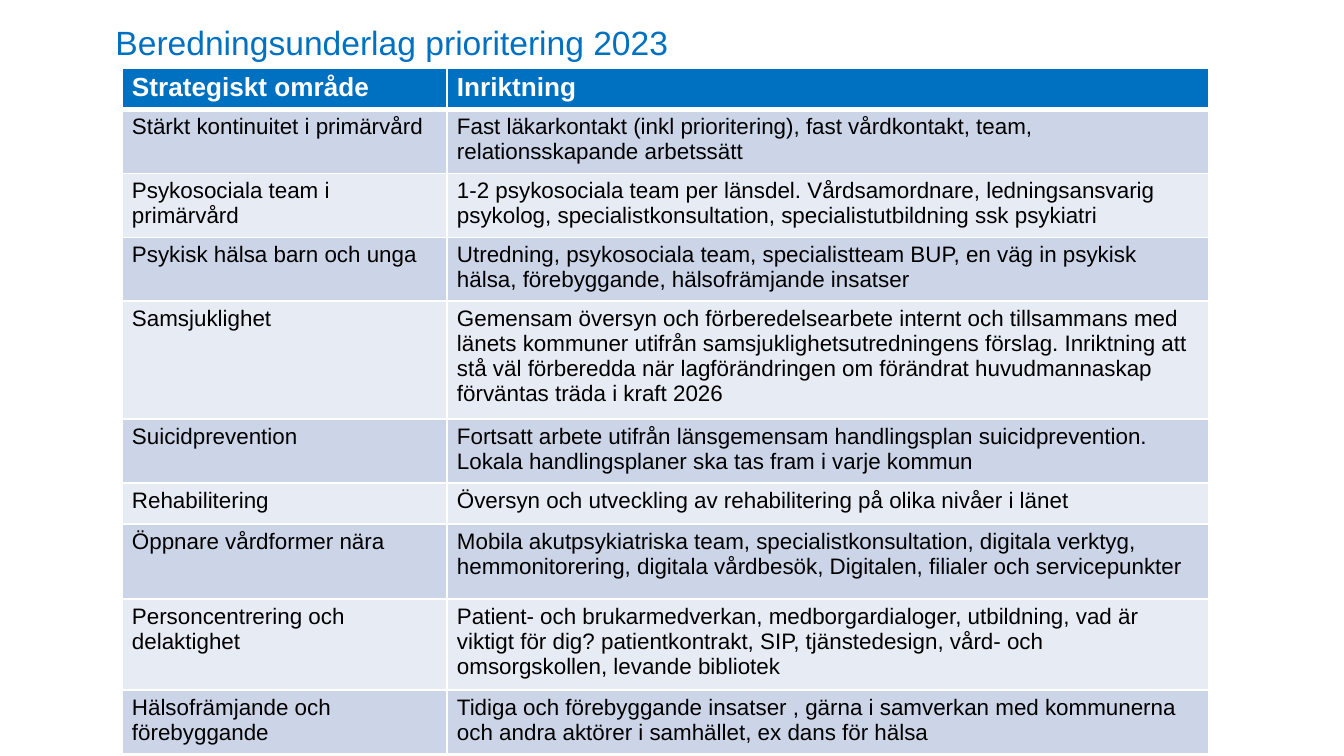
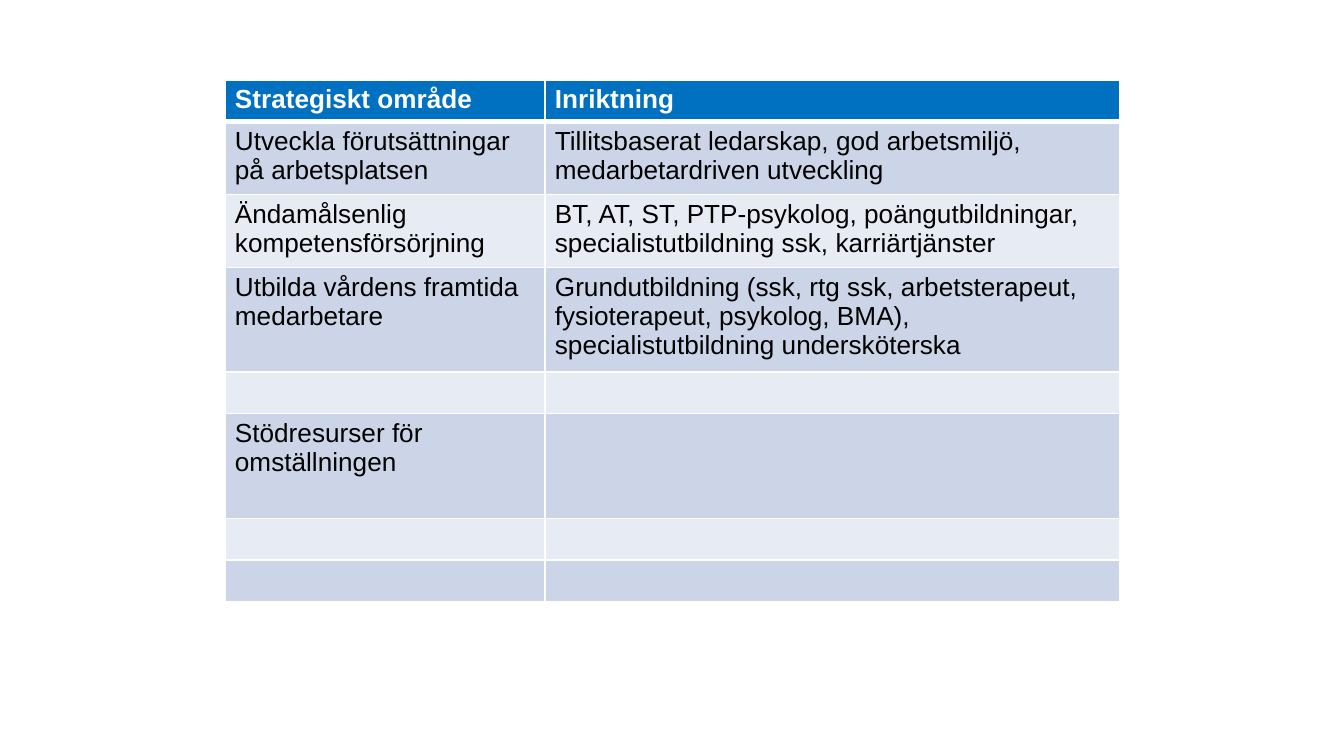
import pptx
import pptx.dml.color
import pptx.enum.text
import pptx.oxml.xmlchemy
import pptx.util

BLUE = pptx.dml.color.RGBColor(0x00, 0x70, 0xC0)
WHITE = pptx.dml.color.RGBColor(0xFF, 0xFF, 0xFF)
BLACK = pptx.dml.color.RGBColor(0x00, 0x00, 0x00)
BANDS = (
    pptx.dml.color.RGBColor(0xCC, 0xD5, 0xE8),
    pptx.dml.color.RGBColor(0xE7, 0xEB, 0xF4),
)
FONT = "Arial"
PX_PER_INCH = 134.4
TITLE_ONLY, BLANK = 5, 6
HEADER_SIZE = 14
HEADER = ("Strategiskt område", "Inriktning")

# Each row: height in px, area, direction
PRIORITIES = [
    (64, "Stärkt kontinuitet i primärvård",
     "Fast läkarkontakt (inkl prioritering), fast vårdkontakt, team, "
     "relationsskapande arbetssätt"),
    (64, "Psykosociala team i primärvård",
     "1-2 psykosociala team per länsdel. Vårdsamordnare, ledningsansvarig "
     "psykolog, specialistkonsultation, specialistutbildning ssk psykiatri"),
    (64, "Psykisk hälsa barn och unga",
     "Utredning, psykosociala team, specialistteam BUP, en väg in psykisk "
     "hälsa, förebyggande, hälsofrämjande insatser"),
    (118, "Samsjuklighet",
     "Gemensam översyn och förberedelsearbete internt och tillsammans med "
     "länets kommuner utifrån samsjuklighetsutredningens förslag. Inriktning "
     "att stå väl förberedda när lagförändringen om förändrat huvudmannaskap "
     "förväntas träda i kraft 2026"),
    (64, "Suicidprevention",
     "Fortsatt arbete utifrån länsgemensam handlingsplan suicidprevention. "
     "Lokala handlingsplaner ska tas fram i varje kommun"),
    (41, "Rehabilitering",
     "Översyn och utveckling av rehabilitering på olika nivåer i länet"),
    (75, "Öppnare vårdformer nära",
     "Mobila akutpsykiatriska team, specialistkonsultation, digitala verktyg, "
     "hemmonitorering, digitala vårdbesök, Digitalen, filialer och "
     "servicepunkter"),
    (90, "Personcentrering och delaktighet",
     "Patient- och brukarmedverkan, medborgardialoger, utbildning, vad är "
     "viktigt för dig? patientkontrakt, SIP, tjänstedesign, vård- och "
     "omsorgskollen, levande bibliotek"),
    (64, "Hälsofrämjande och förebyggande",
     "Tidiga och förebyggande insatser , gärna i samverkan med kommunerna "
     "och andra aktörer i samhället, ex dans för hälsa"),
]
RESOURCES = [
    (73, "Utveckla förutsättningar på arbetsplatsen",
     "Tillitsbaserat ledarskap, god arbetsmiljö, medarbetardriven utveckling"),
    (73, "Ändamålsenlig kompetensförsörjning",
     "BT, AT, ST, PTP-psykolog, poängutbildningar, specialistutbildning ssk, "
     "karriärtjänster"),
    (105, "Utbilda vårdens framtida medarbetare",
     "Grundutbildning (ssk, rtg ssk, arbetsterapeut, fysioterapeut, psykolog, "
     "BMA), specialistutbildning undersköterska"),
    (41, "", ""),
    (105, "Stödresurser för omställningen", ""),
    (41, "", ""),
    (41, "", ""),
]


def px(n):
    return pptx.util.Inches(n / PX_PER_INCH)


def add_run(p, text, size, color, bold=False):
    r = p.add_run()
    r.text = text
    r.font.name = FONT
    r.font.size = pptx.util.Pt(size)
    r.font.bold = bold
    r.font.color.rgb = color


def add_title(s, box, text):
    sp = s.shapes.title
    sp.left, sp.top, sp.width, sp.height = map(px, box)
    tf = sp.text_frame
    tf.word_wrap = True
    tf.auto_size = pptx.enum.text.MSO_AUTO_SIZE.SHAPE_TO_FIT_TEXT
    tf.vertical_anchor = pptx.enum.text.MSO_ANCHOR.TOP
    p = tf.paragraphs[0]
    p.alignment = pptx.enum.text.PP_ALIGN.LEFT
    add_run(p, text, 18, BLUE)


def set_borders(cell, top, bottom):
    """Draw white cell borders; top and bottom are widths in points."""
    tcPr = cell._tc.get_or_add_tcPr()
    for tag, width in (("lnL", 1), ("lnR", 1), ("lnT", top), ("lnB", bottom)):
        ln = pptx.oxml.xmlchemy.OxmlElement(f"a:{tag}")
        ln.set("w", str(pptx.util.Pt(width)))
        fill = pptx.oxml.xmlchemy.OxmlElement("a:solidFill")
        color = pptx.oxml.xmlchemy.OxmlElement("a:srgbClr")
        color.set("val", str(WHITE))
        fill.append(color)
        ln.append(fill)
        tcPr.append(ln)


def fill_cell(cell, text, row, size):
    header = row == 0
    set_borders(cell, 3 if row == 1 else 1, 3 if header else 1)
    cell.fill.solid()
    cell.fill.fore_color.rgb = BLUE if header else BANDS[(row - 1) % 2]
    cell.margin_left = cell.margin_right = px(10)
    cell.margin_top = cell.margin_bottom = px(5)
    p = cell.text_frame.paragraphs[0]
    if text:
        add_run(p, text, size, WHITE if header else BLACK, header)
    else:
        end = pptx.oxml.xmlchemy.OxmlElement("a:endParaRPr")
        end.set("sz", str(size * 100))
        p._p.append(end)


def add_area_table(s, left, top, col_widths, rows, body_size):
    rows = [(40, *HEADER), *rows]
    height = sum(row[0] for row in rows)
    table = s.shapes.add_table(
        len(rows), len(col_widths), px(left), px(top),
        px(sum(col_widths)), px(height)).table
    for col, width in zip(table.columns, col_widths):
        col.width = px(width)
    for i, (row_height, *texts) in enumerate(rows):
        table.rows[i].height = px(row_height)
        for j, text in enumerate(texts):
            fill_cell(table.cell(i, j), text, i, body_size if i else HEADER_SIZE)


def main():
    prs = pptx.Presentation()
    prs.slide_width, prs.slide_height = px(1344), px(756)

    s = prs.slides.add_slide(prs.slide_layouts[TITLE_ONLY])
    add_title(s, (102, 15, 1067, 54), "Beredningsunderlag prioritering 2023")
    add_area_table(s, 122, 68, (325, 762), PRIORITIES, 12)

    s = prs.slides.add_slide(prs.slide_layouts[BLANK])
    add_area_table(s, 225, 80, (320, 575), RESOURCES, 14)

    prs.save("out.pptx")


if __name__ == "__main__":
    main()
